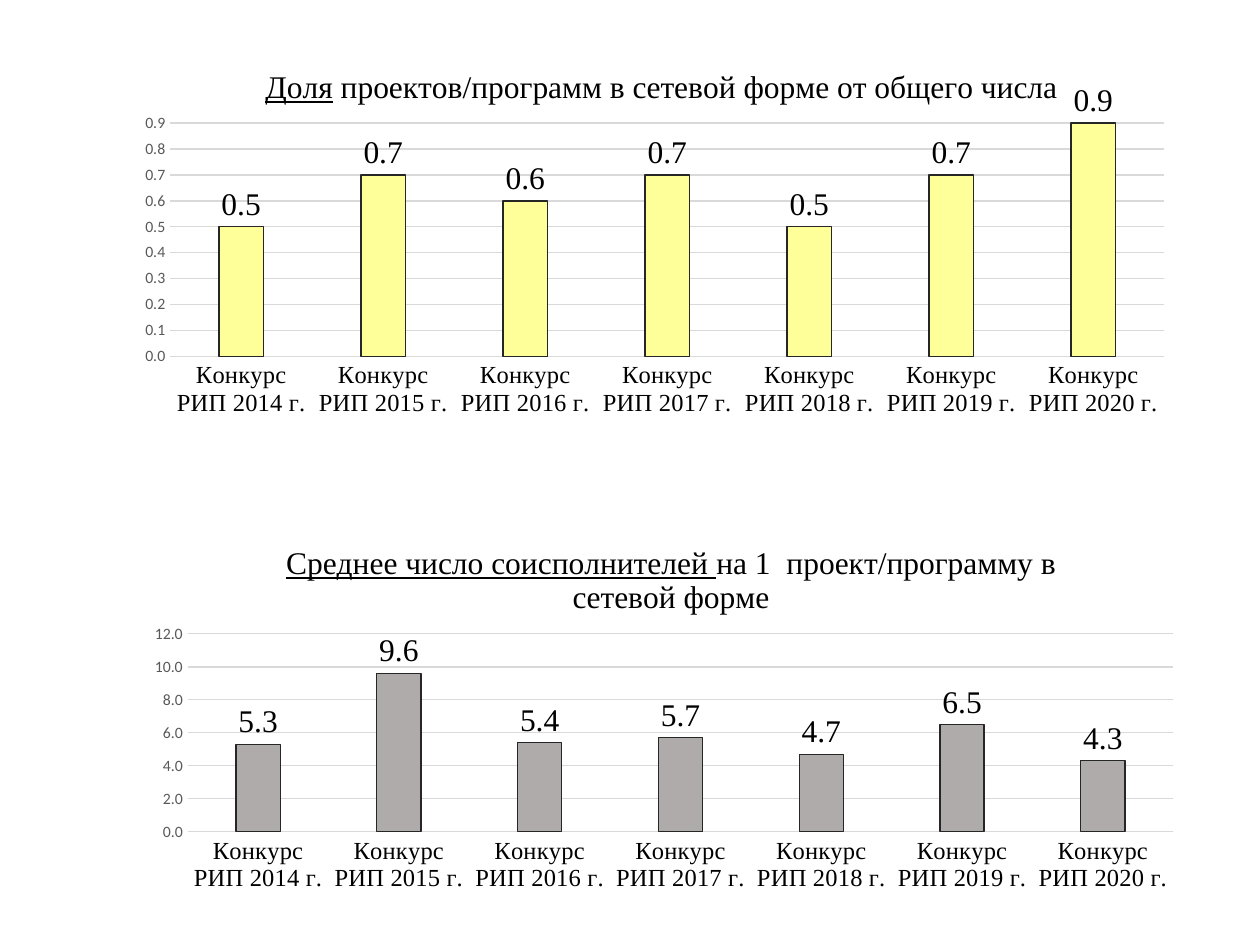
"""Build a slide with two column charts about network projects by contest year."""
from dataclasses import dataclass

from lxml import etree
from pptx import Presentation
from pptx import util as u
from pptx.chart.data import CategoryChartData
from pptx.dml.color import RGBColor
from pptx.enum import chart as ch
from pptx.oxml import ns

BLACK = RGBColor(0x00, 0x00, 0x00)
DARK = RGBColor(0x26, 0x26, 0x26)
GRAY_TEXT = RGBColor(0x59, 0x59, 0x59)
GRID = RGBColor(0xD9, 0xD9, 0xD9)
YELLOW = RGBColor(0xFF, 0xFF, 0x99)
GRAY = RGBColor(0xAF, 0xAB, 0xAB)
SERIF = "Times New Roman"
SANS = "Calibri"
NUMBER_FORMAT = "0.0"
YEARS = range(2014, 2021)
SLIDE_WIDTH = u.Inches(10)
SLIDE_HEIGHT = u.Inches(7.5)
CHART_WIDTH = 0.843
CHART_HEIGHT = 0.4


@dataclass(frozen=True)
class ColumnChart:
    underlined: str
    rest: str
    values: tuple[float, ...]
    color: RGBColor
    left: float
    top: float
    maximum: float
    step: float
    title_place: dict[str, float]
    plot_place: dict[str, float]


CHARTS = (
    ColumnChart(
        "Доля", " проектов/программ в сетевой форме от общего числа",
        (0.5, 0.7, 0.6, 0.7, 0.5, 0.7, 0.9), YELLOW, 0.098, 0.048, 0.9, 0.1,
        {"x": 0.13, "y": 0.05},
        {"x": 0.044, "y": 0.206, "w": 0.936, "h": 0.617},
    ),
    ColumnChart(
        "Среднее число соисполнителей ", "на 1  проект/программу в сетевой форме",
        (5.3, 9.6, 5.4, 5.7, 4.7, 6.5, 4.3), GRAY, 0.106, 0.552, 12, 2,
        {"x": 0.14, "y": 0.05},
        {"x": 0.051, "y": 0.297, "w": 0.928, "h": 0.524},
    ),
)


def style_font(font, name: str, size: float, color: RGBColor) -> None:
    font.name = name
    font.size = u.Pt(size)
    font.bold = False
    font.color.rgb = color


def style_line(line, color: RGBColor) -> None:
    line.color.rgb = color
    line.width = u.Pt(0.75)


def place(element, shares: dict[str, float], inner: bool = False) -> None:
    layout = element.find(ns.qn("c:layout"))
    if layout is None:
        layout = etree.Element(ns.qn("c:layout"))
        text = element.find(ns.qn("c:tx"))
        element.insert(0 if text is None else element.index(text) + 1, layout)
    for child in list(layout):
        layout.remove(child)
    manual = etree.SubElement(layout, ns.qn("c:manualLayout"))
    if inner:
        etree.SubElement(manual, ns.qn("c:layoutTarget")).set("val", "inner")
    for side in ("x", "y"):
        etree.SubElement(manual, ns.qn(f"c:{side}Mode")).set("val", "edge")
    for key, share in shares.items():
        etree.SubElement(manual, ns.qn(f"c:{key}")).set("val", str(share))


def add_title(chart, spec_chart: ColumnChart) -> None:
    paragraph = chart.chart_title.text_frame.paragraphs[0]
    for words, underline in ((spec_chart.underlined, True), (spec_chart.rest, False)):
        run = paragraph.add_run()
        run.text = words
        style_font(run.font, SERIF, 18, BLACK)
        run.font.underline = underline
    chart.chart_title.include_in_layout = False
    place(chart.chart_title._element, spec_chart.title_place)


def style_axes(chart, maximum: float, step: float) -> None:
    for axis in (chart.category_axis, chart.value_axis):
        axis.major_tick_mark = axis.minor_tick_mark = ch.XL_TICK_MARK.NONE
    style_font(chart.category_axis.tick_labels.font, SERIF, 14, BLACK)
    style_line(chart.category_axis.format.line, GRID)
    values = chart.value_axis
    values.minimum_scale, values.maximum_scale, values.major_unit = 0, maximum, step
    values.format.line.fill.background()
    style_line(values.major_gridlines.format.line, GRID)
    style_font(values.tick_labels.font, SANS, 9, GRAY_TEXT)
    values.tick_labels.number_format = NUMBER_FORMAT
    values.tick_labels.number_format_is_linked = False


def style_columns(plot, color: RGBColor) -> None:
    plot.gap_width, plot.overlap = 219, -27
    plot.vary_by_categories = False
    series = plot.series[0]
    series.format.fill.solid()
    series.format.fill.fore_color.rgb = color
    style_line(series.format.line, DARK)
    labels = series.data_labels
    labels.show_value = True
    labels.position = ch.XL_LABEL_POSITION.OUTSIDE_END
    labels.number_format = NUMBER_FORMAT
    labels.number_format_is_linked = False
    style_font(labels.font, SERIF, 18, BLACK)


def add_column_chart(slide, item: ColumnChart) -> None:
    data = CategoryChartData(number_format=NUMBER_FORMAT)
    data.categories = [f"Конкурс РИП {year} г." for year in YEARS]
    data.add_series("Series 1", item.values)
    chart = slide.shapes.add_chart(
        ch.XL_CHART_TYPE.COLUMN_CLUSTERED,
        int(SLIDE_WIDTH * item.left), int(SLIDE_HEIGHT * item.top),
        int(SLIDE_WIDTH * CHART_WIDTH), int(SLIDE_HEIGHT * CHART_HEIGHT), data,
    ).chart
    style_font(chart.font, SANS, 10, BLACK)
    chart.has_legend = False
    add_title(chart, item)
    style_axes(chart, item.maximum, item.step)
    style_columns(chart.plots[0], item.color)
    plot_area = chart._chartSpace.find(f".//{ns.qn('c:plotArea')}")
    place(plot_area, item.plot_place, inner=True)


def main() -> None:
    presentation = Presentation()
    presentation.slide_width, presentation.slide_height = SLIDE_WIDTH, SLIDE_HEIGHT
    slide = presentation.slides.add_slide(presentation.slide_layouts[6])
    for item in CHARTS:
        add_column_chart(slide, item)
    presentation.save("out.pptx")


if __name__ == "__main__":
    main()
